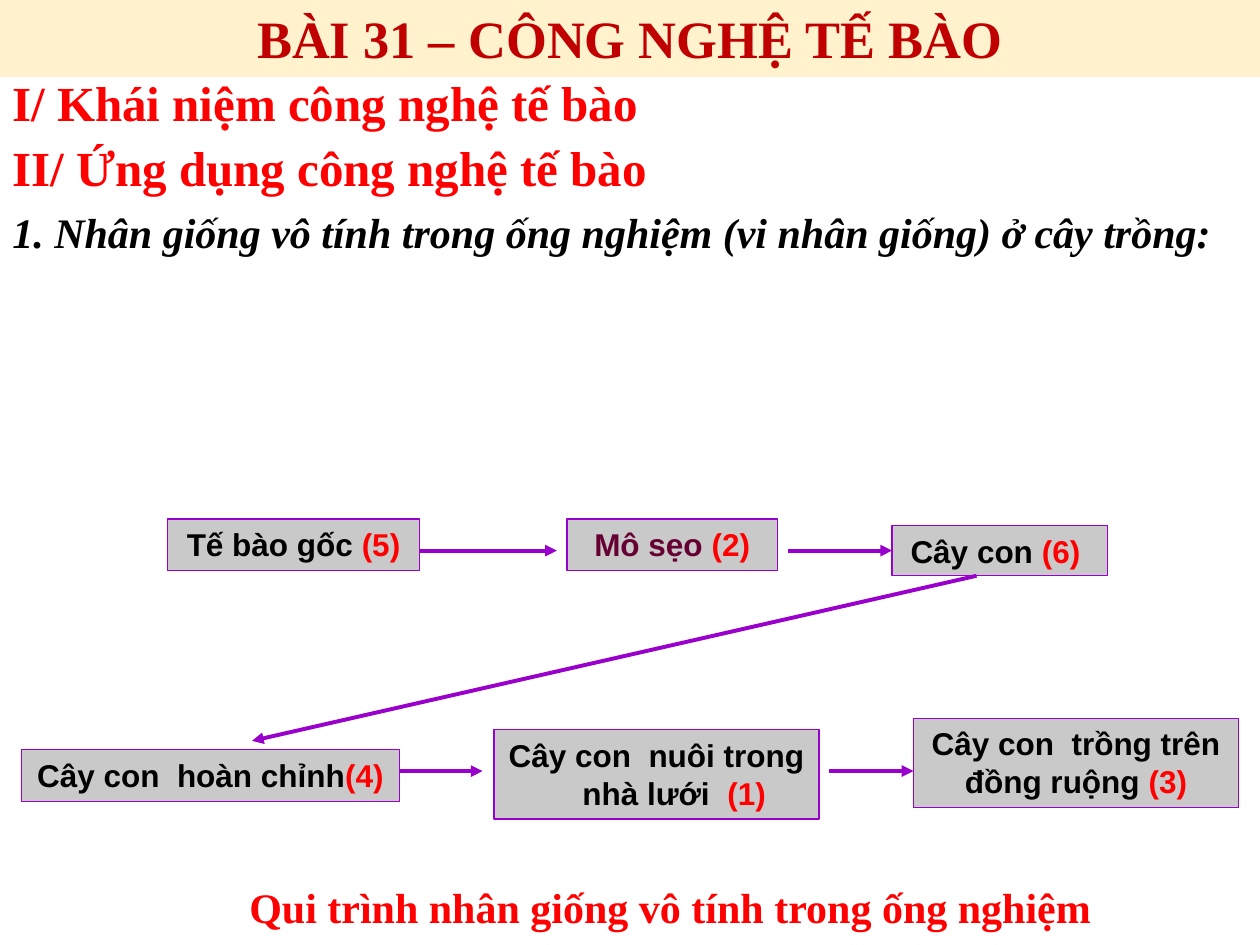
from lxml import etree
from pptx import Presentation
from pptx.dml.color import RGBColor
from pptx.enum.shapes import MSO_CONNECTOR, MSO_SHAPE
from pptx.enum.text import MSO_ANCHOR, PP_ALIGN
from pptx.oxml.ns import qn
from pptx.util import Inches, Pt

RECTANGLE = MSO_SHAPE.RECTANGLE
STRAIGHT = MSO_CONNECTOR.STRAIGHT
CENTER, LEFT = PP_ALIGN.CENTER, PP_ALIGN.LEFT
TOP = MSO_ANCHOR.TOP

SERIF, SANS = "Times New Roman", "Arial"
RED, DARK_RED, BLACK, PLUM = "FF0000", "C00000", "000000", "660033"
PURPLE, GREY, CREAM = "9900CC", "C9C9C9", "FFF2CC"

# Step label, number, label colour, (left, top, width, height)
STEPS = [
    ("Tế bào gốc ", "(5)", BLACK, (1.33, 4.12, 2, 0.41)),
    ("Mô sẹo ", "(2)", PLUM, (4.5, 4.12, 1.67, 0.41)),
    ("Cây con ", "(6) ", BLACK, (7.08, 4.17, 1.71, 0.4)),
    ("Cây con  hoàn chỉnh", "(4)", BLACK, (0.17, 5.95, 3, 0.41)),
    ("Cây con  nuôi trong nhà lưới  ", "(1)", BLACK, (3.92, 5.79, 2.58, 0.71)),
    ("Cây con  trồng trên đồng ruộng ", "(3)", BLACK, (7.25, 5.7, 2.58, 0.71)),
]
HANGING_STEP = "(1)"

# Start and end of each arrow
ARROWS = [
    ((3.33, 4.37), (4.42, 4.37)),
    ((6.25, 4.37), (7.08, 4.37)),
    ((7.75, 4.57), (2, 5.88)),
    ((3.17, 6.12), (3.83, 6.12)),
    ((6.58, 6.12), (7.25, 6.12)),
]

# Text, size, colour, italic, (left, top, width, height)
HEADINGS = [
    ("I/ Khái niệm công nghệ tế bào", 28, RED, False, (0, 0.53, 5.33, 0.57)),
    ("II/ Ứng dụng công nghệ tế bào", 28, RED, False, (0, 1.04, 5.33, 0.57)),
    ("1. Nhân giống vô tính trong ống nghiệm (vi nhân giống) ở cây trồng:",
     24, BLACK, True, (0, 1.59, 10, 0.5)),
    ("Qui trình nhân giống vô tính trong ống nghiệm",
     24, RED, False, (1.88, 6.95, 6.92, 0.5)),
]


def color(hex_value):
    return RGBColor.from_string(hex_value)


def inches(values):
    return [Inches(value) for value in values]


def write(shape, runs, font_name, size, align, italic=False):
    """Fill a shape with one bold paragraph of (text, colour) runs."""
    frame = shape.text_frame
    frame.word_wrap = True
    frame.vertical_anchor = TOP
    paragraph = frame.paragraphs[0]
    paragraph.alignment = align
    font = paragraph.font
    font.name, font.size, font.bold, font.italic = font_name, Pt(size), True, italic
    for text, hex_value in runs:
        run = paragraph.add_run()
        run.text = text
        run.font.color.rgb = color(hex_value)
    return paragraph


def add_box(slide, place, fill, line=None):
    box = slide.shapes.add_shape(RECTANGLE, *inches(place))
    box.shadow.inherit = False
    box.fill.solid()
    box.fill.fore_color.rgb = color(fill)
    if line:
        box.line.color.rgb = color(line)
        box.line.width = Pt(0.75)
    else:
        box.line.fill.background()
    return box


def add_step(slide, label, number, label_color, place):
    box = add_box(slide, place, GREY, PURPLE)
    paragraph = write(box, [(label, label_color), (number, RED)], SANS, 18, CENTER)
    if number == HANGING_STEP:
        # The second line sits slightly right of centre
        properties = paragraph._p.get_or_add_pPr()
        properties.set("marL", str(Inches(0.28)))
        properties.set("indent", str(-Inches(0.28)))


def add_arrow(slide, start, end):
    arrow = slide.shapes.add_connector(STRAIGHT, *inches(start + end))
    arrow.line.color.rgb = color(PURPLE)
    arrow.line.width = Pt(2.25)
    etree.SubElement(arrow.line._get_or_add_ln(), qn("a:tailEnd"), type="triangle")
    etree.SubElement(arrow._element.spPr, qn("a:effectLst"))


def add_heading(slide, text, size, hex_value, italic, place):
    heading = slide.shapes.add_textbox(*inches(place))
    write(heading, [(text, hex_value)], SERIF, size, LEFT, italic)


def main():
    presentation = Presentation()
    presentation.slide_width, presentation.slide_height = Inches(10), Inches(7.5)
    slide = presentation.slides.add_slide(presentation.slide_layouts[6])

    # Process diagram
    for step in STEPS:
        add_step(slide, *step)
    for start, end in ARROWS:
        add_arrow(slide, start, end)

    # Title band
    title = add_box(slide, (0, 0, 10, 0.61), CREAM)
    write(title, [("BÀI 31 – CÔNG NGHỆ TẾ BÀO", DARK_RED)], SERIF, 30, CENTER)

    # Headings and diagram caption
    for heading in HEADINGS:
        add_heading(slide, *heading)

    presentation.save("out.pptx")


if __name__ == "__main__":
    main()
